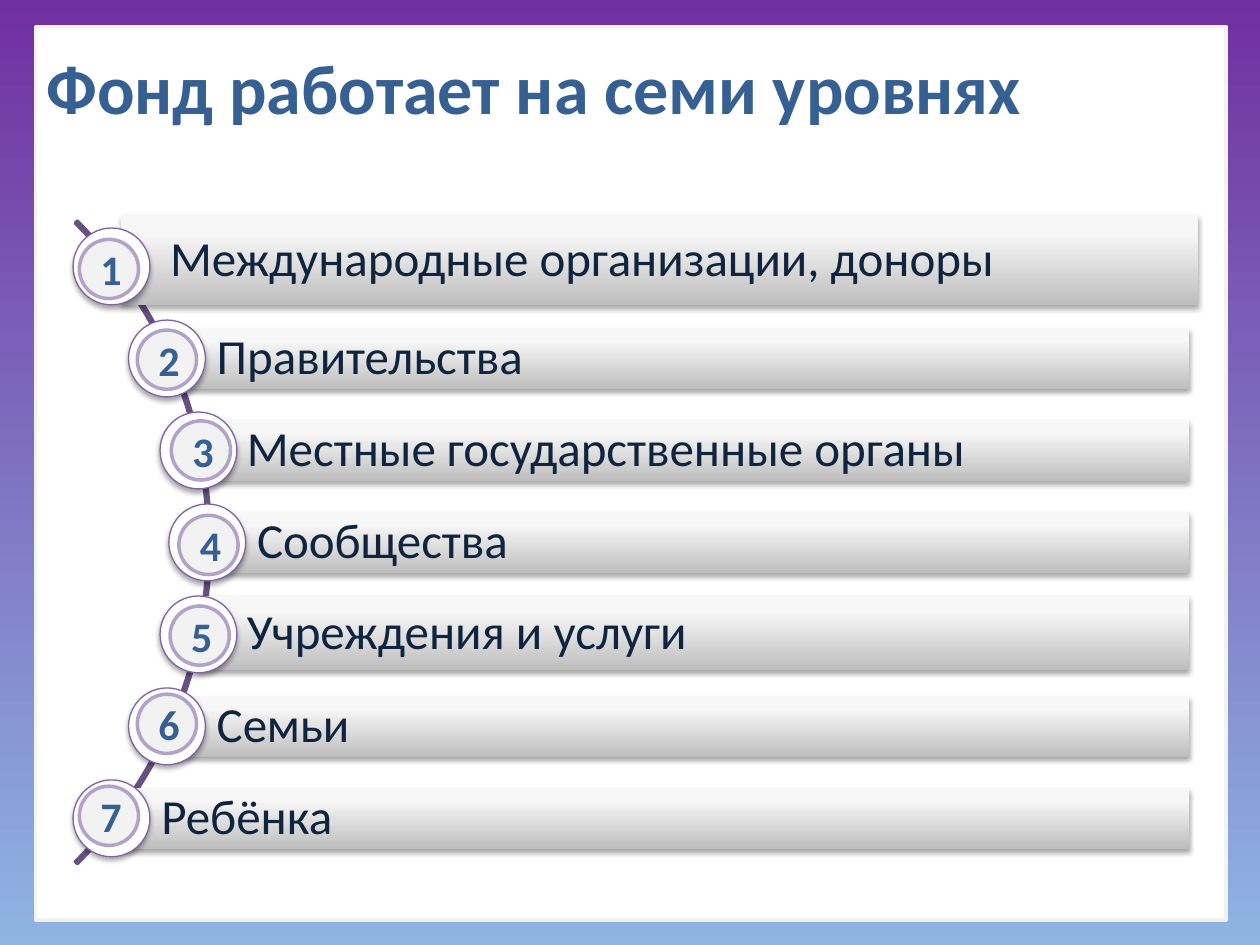
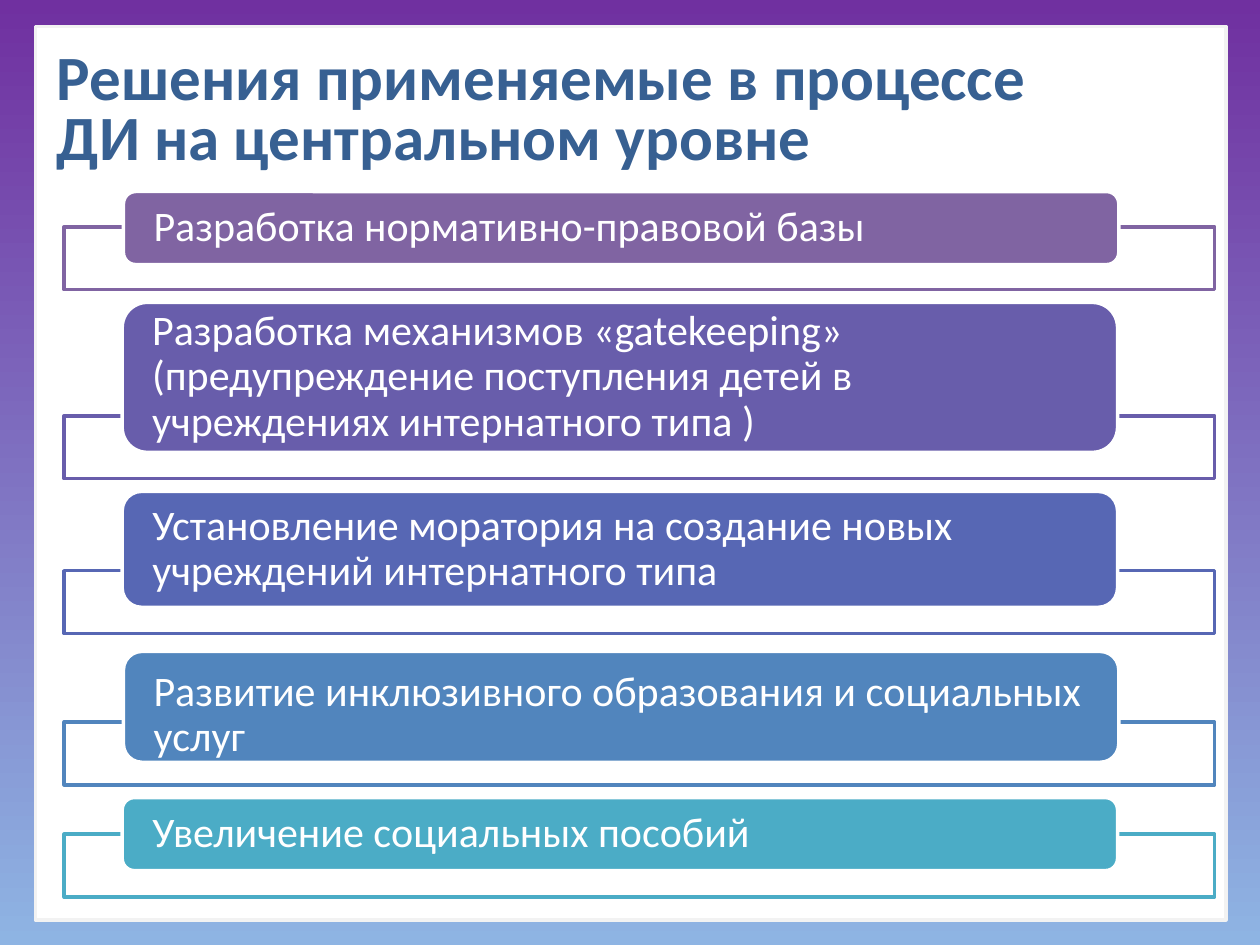
from lxml import etree
from pptx import Presentation
from pptx import util as u
from pptx.dml.color import RGBColor
from pptx.enum import shapes, text
from pptx.oxml import ns

PURPLE = RGBColor(0x70, 0x30, 0xA0)
SKY = RGBColor(0x8E, 0xB4, 0xE3)
WHITE = RGBColor(0xFF, 0xFF, 0xFF)
PALE = RGBColor(0xF2, 0xF2, 0xF2)
TITLE_BLUE = RGBColor(0x37, 0x60, 0x92)
NAVY = RGBColor(0x0F, 0x24, 0x3E)
ARC_PURPLE = RGBColor(0x67, 0x50, 0x82)
VIOLET = RGBColor(0x80, 0x64, 0xA2)
LILAC = RGBColor(0xB3, 0xA2, 0xC7)
BAR_DARK = RGBColor(0xBE, 0xBE, 0xBE)
BAR_LIGHT = RGBColor(0xF7, 0xF7, 0xF7)
INDIGO = RGBColor(0x68, 0x5D, 0xAB)
COBALT = RGBColor(0x57, 0x67, 0xB4)
STEEL = RGBColor(0x51, 0x85, 0xBD)
TEAL = RGBColor(0x4B, 0xAC, 0xC6)

FONT = "Calibri"
SHADOW = (
    f'<a:outerShdw {ns.nsdecls("a")} blurRad="39400" dist="22900" dir="5400000" '
    'rotWithShape="0"><a:srgbClr val="000000"><a:alpha val="35000"/></a:srgbClr></a:outerShdw>'
)


def write(shape, words, size=24, color=WHITE, bold=False, align=text.PP_ALIGN.LEFT,
          spacing=1.0, insets=(0.1, 0.05, 0.1, 0.05)):
    frame = shape.text_frame
    frame.text = words
    frame.word_wrap = True
    frame.auto_size = text.MSO_AUTO_SIZE.NONE
    frame.vertical_anchor = text.MSO_ANCHOR.MIDDLE
    frame.margin_left, frame.margin_top, frame.margin_right, frame.margin_bottom = map(u.Inches, insets)
    paragraph = frame.paragraphs[0]
    paragraph.alignment = align
    paragraph.line_spacing = spacing
    font = paragraph.runs[0].font
    font.name, font.size, font.bold = FONT, u.Pt(size), bold
    font.color.rgb = color


def draw(slide, kind, box, fill=None, line=None, width=2, shadow=False):
    shape = slide.shapes.add_shape(kind, *map(u.Inches, box))
    shape.shadow.inherit = False
    if shadow:
        shape.element.spPr.find(ns.qn("a:effectLst")).append(etree.fromstring(SHADOW))
    if fill is None:
        shape.fill.background()
    else:
        shape.fill.solid()
        shape.fill.fore_color.rgb = fill
    if line is None:
        shape.line.fill.background()
    else:
        shape.line.color.rgb = line
        shape.line.width = u.Pt(width)
    return shape


prs = Presentation()
prs.slide_width, prs.slide_height = u.Inches(10), u.Inches(7.5)
layout = prs.slide_layouts[5]

# Shared background
backdrop = layout.background.fill
backdrop.gradient()
backdrop.gradient_angle = 270
for stop, color in zip(backdrop.gradient_stops, (PURPLE, SKY)):
    stop.color.rgb = color

# Slides and titles: words, box, size, line spacing, bottom inset
titles = [
    ("Фонд работает на семи уровнях", (0.27, 0.3, 8.35, 0.91), 40, 1.0, 0.19),
    ("Решения применяемые в процессе ДИ на центральном уровне", (0.35, 0.36, 8.03, 1.1), 36, 0.8, 0.09),
]
for words, box, size, spacing, bottom in titles:
    slide = prs.slides.add_slide(layout)
    title = slide.shapes.title
    title.left, title.top, title.width, title.height = map(u.Inches, box)
    write(title, words, size=size, color=TITLE_BLUE, bold=True, spacing=spacing,
          insets=(0.1, 0.05, 0.1, bottom))
levels_slide, solutions_slide = prs.slides

# Shared white panel, moved into the layout behind its placeholders
panel = draw(levels_slide, shapes.MSO_SHAPE.RECTANGLE, (0.28, 0.21, 9.45, 7.09), WHITE, PALE)
layout.shapes.element.insert(2, panel.element)

# Slide 1: arc behind the seven levels
arc = draw(levels_slide, shapes.MSO_SHAPE.BLOCK_ARC, (-5.54, 0.7, 7.21, 7.21), line=ARC_PURPLE)
for index, value in enumerate((189, 27, 0.003)):
    arc.adjustments[index] = value

# Level name, bar left, top, right and height, ring left, badge left and top
RING, BADGE, PITCH = 0.61, 0.47, 0.73
levels = [
    ("Международные организации, доноры", 0.96, 1.71, 9.51, 0.71, 0.58, 0.63, 1.9),
    ("Правительства", 1.33, 2.6, 9.44, 0.49, 1.02, 1.09, 2.62),
    ("Местные государственные органы", 1.57, 3.33, 9.44, 0.49, 1.27, 1.36, 3.34),
    ("Сообщества", 1.65, 4.06, 9.44, 0.49, 1.34, 1.42, 4.09),
    ("Учреждения и услуги", 1.57, 4.73, 9.44, 0.59, 1.27, 1.35, 4.81),
    ("Семьи", 1.33, 5.52, 9.44, 0.49, 1.02, 1.09, 5.51),
    ("Ребёнка", 0.89, 6.25, 9.44, 0.49, 0.58, 0.63, 6.24),
]
for index, (name, left, top, right, height, ring_left, badge_left, badge_top) in enumerate(levels):
    bar = draw(levels_slide, shapes.MSO_SHAPE.RECTANGLE, (left, top, right - left, height), shadow=True)
    bar.fill.gradient()
    bar.fill.gradient_angle = 90
    for stop, color, position in zip(bar.fill.gradient_stops, (BAR_DARK, BAR_LIGHT), (0, 0.8)):
        stop.color.rgb = color
        stop.position = position
    write(bar, name, size=28, color=NAVY, spacing=0.9, insets=(0.39, 0.08, 0.08, 0.08))
    draw(levels_slide, shapes.MSO_SHAPE.OVAL, (ring_left, 1.81 + index * PITCH, RING, RING),
         WHITE, VIOLET, 0.75, shadow=True)
    badge = draw(levels_slide, shapes.MSO_SHAPE.OVAL, (badge_left, badge_top, BADGE, BADGE), PALE, LILAC)
    write(badge, str(index + 1), color=TITLE_BLUE, bold=True, align=text.PP_ALIGN.CENTER)

# Slide 2: solution, colour, tray top, label left, top and height, extra top inset
solutions = [
    ("Разработка нормативно-правовой базы", VIOLET, 1.8, 0.98, 1.52, 0.58, 0),
    ("Разработка механизмов «gatekeeping» (предупреждение поступления детей в "
     "учреждениях интернатного типа )", INDIGO, 3.3, 0.97, 2.4, 1.19, 0),
    ("Установление моратория на создание новых учреждений интернатного типа",
     COBALT, 4.53, 0.97, 3.9, 0.92, 0),
    ("Развитие инклюзивного образования и социальных услуг", STEEL, 5.73, 0.98, 5.17, 0.88, 0.14),
    ("Увеличение социальных пособий", TEAL, 6.62, 0.97, 6.33, 0.58, 0),
]
for words, color, tray_top, left, top, height, drop in solutions:
    draw(solutions_slide, shapes.MSO_SHAPE.RECTANGLE, (0.51, tray_top, 9.13, 0.5), WHITE, color)
    label = draw(solutions_slide, shapes.MSO_SHAPE.ROUNDED_RECTANGLE, (left, top, 7.9, height), color, WHITE)
    # The rounded corners already indent the text by about 5% of the height
    side = 0.24 - 0.05 * height
    write(label, words, spacing=0.9, insets=(side, drop, side, 0))

prs.save("out.pptx")
